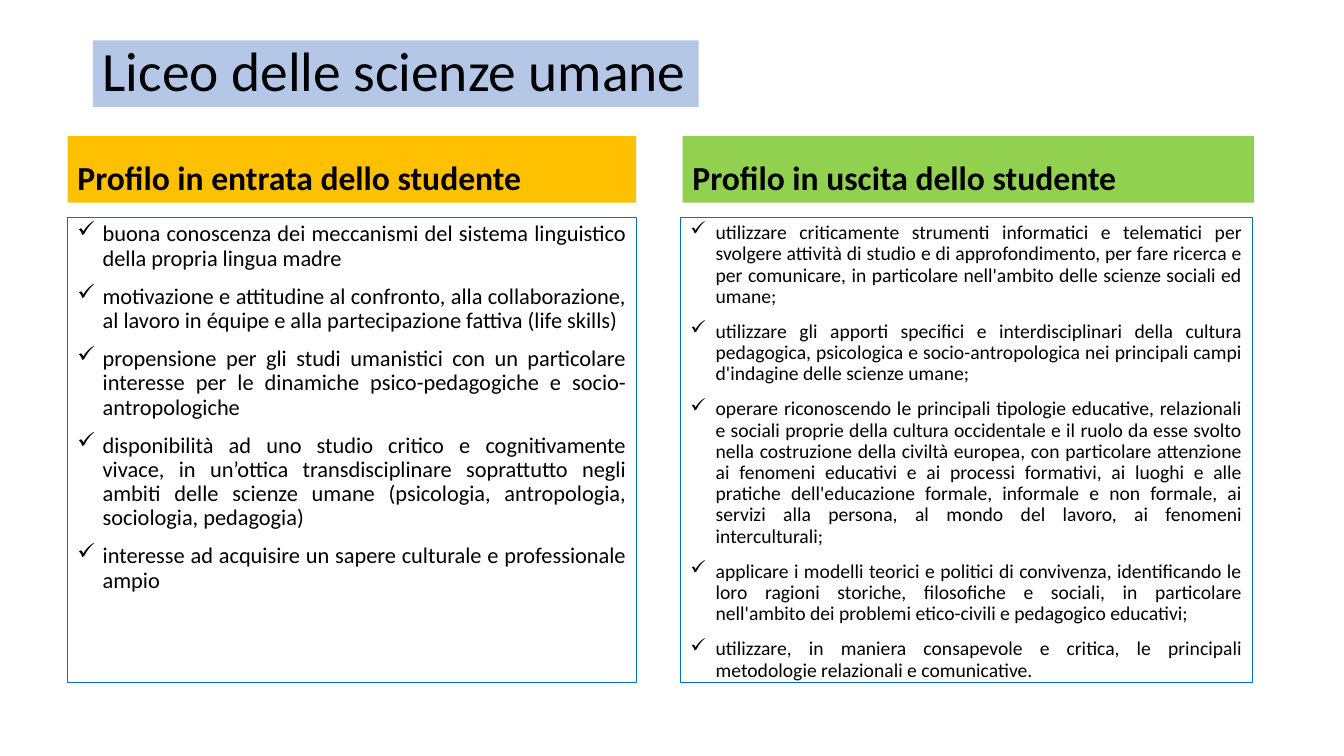
from lxml import etree
from pptx import Presentation
from pptx.dml.color import RGBColor
from pptx.enum.shapes import MSO_SHAPE
from pptx.enum.text import MSO_ANCHOR, PP_ALIGN
from pptx.oxml.ns import qn
from pptx.util import Emu, Pt

RECTANGLE = MSO_SHAPE.RECTANGLE
TOP, MIDDLE, BOTTOM = MSO_ANCHOR.TOP, MSO_ANCHOR.MIDDLE, MSO_ANCHOR.BOTTOM
LEFT, JUSTIFY = PP_ALIGN.LEFT, PP_ALIGN.JUSTIFY

PX = 9144
FONT = "Calibri"
COLORS = {
    "text": "000000",
    "title": "B4C7E7",
    "entry": "FFC000",
    "exit": "92D050",
    "border": "0070C0",
}
HEADER_HEIGHT = 66
LIST_OFFSET = 81
BULLET_INDENT = 25

ENTRY_PROFILE = [
    "buona conoscenza dei meccanismi del sistema linguistico della propria lingua madre",
    "motivazione e attitudine al confronto, alla collaborazione, al lavoro in équipe "
    "e alla partecipazione fattiva (life skills)",
    "propensione per gli studi umanistici con un particolare interesse per le dinamiche "
    "psico-pedagogiche e socio-antropologiche",
    "disponibilità ad uno studio critico e cognitivamente vivace, in un’ottica "
    "transdisciplinare soprattutto negli ambiti delle scienze umane (psicologia, "
    "antropologia, sociologia, pedagogia)",
    "interesse ad acquisire un sapere culturale e professionale ampio",
]
EXIT_PROFILE = [
    "utilizzare criticamente strumenti informatici e telematici per svolgere attività "
    "di studio e di approfondimento, per fare ricerca e per comunicare, in particolare "
    "nell'ambito delle scienze sociali ed umane;",
    "utilizzare gli apporti specifici e interdisciplinari della cultura pedagogica, "
    "psicologica e socio-antropologica nei principali campi d'indagine delle scienze umane;",
    "operare riconoscendo le principali tipologie educative, relazionali e sociali proprie "
    "della cultura occidentale e il ruolo da esse svolto nella costruzione della civiltà "
    "europea, con particolare attenzione ai fenomeni educativi e ai processi formativi, "
    "ai luoghi e alle pratiche dell'educazione formale, informale e non formale, ai servizi "
    "alla persona, al mondo del lavoro, ai fenomeni interculturali;",
    "applicare i modelli teorici e politici di convivenza, identificando le loro ragioni "
    "storiche, filosofiche e sociali, in particolare nell'ambito dei problemi etico-civili "
    "e pedagogico educativi;",
    "utilizzare, in maniera consapevole e critica, le principali metodologie relazionali "
    "e comunicative.",
]


def px(length):
    """Turn a length in px into EMU."""
    return Emu(length * PX)


def add_panel(slide, box, fill=None, border=None):
    """Add a rectangle with an optional fill and border."""
    panel = slide.shapes.add_shape(RECTANGLE, *map(px, box))
    panel.shadow.inherit = False
    if fill:
        panel.fill.solid()
        panel.fill.fore_color.rgb = RGBColor.from_string(COLORS[fill])
    else:
        panel.fill.background()
    if border:
        panel.line.color.rgb = RGBColor.from_string(COLORS[border])
        panel.line.width = Pt(0.75)
    else:
        panel.line.fill.background()
    return panel


def add_check_bullet(paragraph):
    """Give a paragraph a hanging check mark."""
    properties = paragraph._p.get_or_add_pPr()
    properties.set("marL", str(px(BULLET_INDENT)))
    properties.set("indent", str(-px(BULLET_INDENT)))
    etree.SubElement(properties, qn("a:buChar")).set("char", "✓")


def write_text(panel, texts, size, bold=False, anchor=TOP, align=LEFT, bullets=False):
    """Write one formatted paragraph for each text."""
    frame = panel.text_frame
    frame.word_wrap = True
    frame.vertical_anchor = anchor
    for index, text in enumerate(texts):
        paragraph = frame.add_paragraph() if index else frame.paragraphs[0]
        if bullets:
            add_check_bullet(paragraph)
        paragraph.alignment = align
        paragraph.line_spacing = 0.9
        if index:
            paragraph.space_before = Pt(10)
        run = paragraph.add_run()
        run.text = text
        run.font.name = FONT
        run.font.size = Pt(size)
        run.font.bold = bold
        run.font.color.rgb = RGBColor.from_string(COLORS["text"])


def add_title(slide, box, title):
    """Place the slide title on its coloured band."""
    write_text(add_panel(slide, box, fill="title"), [title], 39.6, anchor=MIDDLE)


def add_profile(slide, box, heading, items, fill, size, list_shift=0):
    """Place a student profile: a heading band above a bordered list."""
    left, top, width, height = box
    band = add_panel(slide, (left, top, width, HEADER_HEIGHT), fill=fill)
    write_text(band, [heading], 24, bold=True, anchor=BOTTOM)
    list_box = (left + list_shift, top + LIST_OFFSET, width, height - LIST_OFFSET)
    item_list = add_panel(slide, list_box, border="border")
    write_text(item_list, items, size, align=JUSTIFY, bullets=True)


def main():
    """Build and save the slide."""
    deck = Presentation()
    deck.slide_width, deck.slide_height = px(1333), px(750)
    slide = deck.slides.add_slide(deck.slide_layouts[6])
    add_title(slide, (92, 40, 601, 66), "Liceo delle scienze umane")
    add_profile(slide, (67, 135, 564, 542), "Profilo in entrata dello studente",
                ENTRY_PROFILE, "entry", 16)
    add_profile(slide, (677, 135, 567, 542), "Profilo in uscita dello studente",
                EXIT_PROFILE, "exit", 14, list_shift=-2)
    deck.save("out.pptx")


if __name__ == "__main__":
    main()
